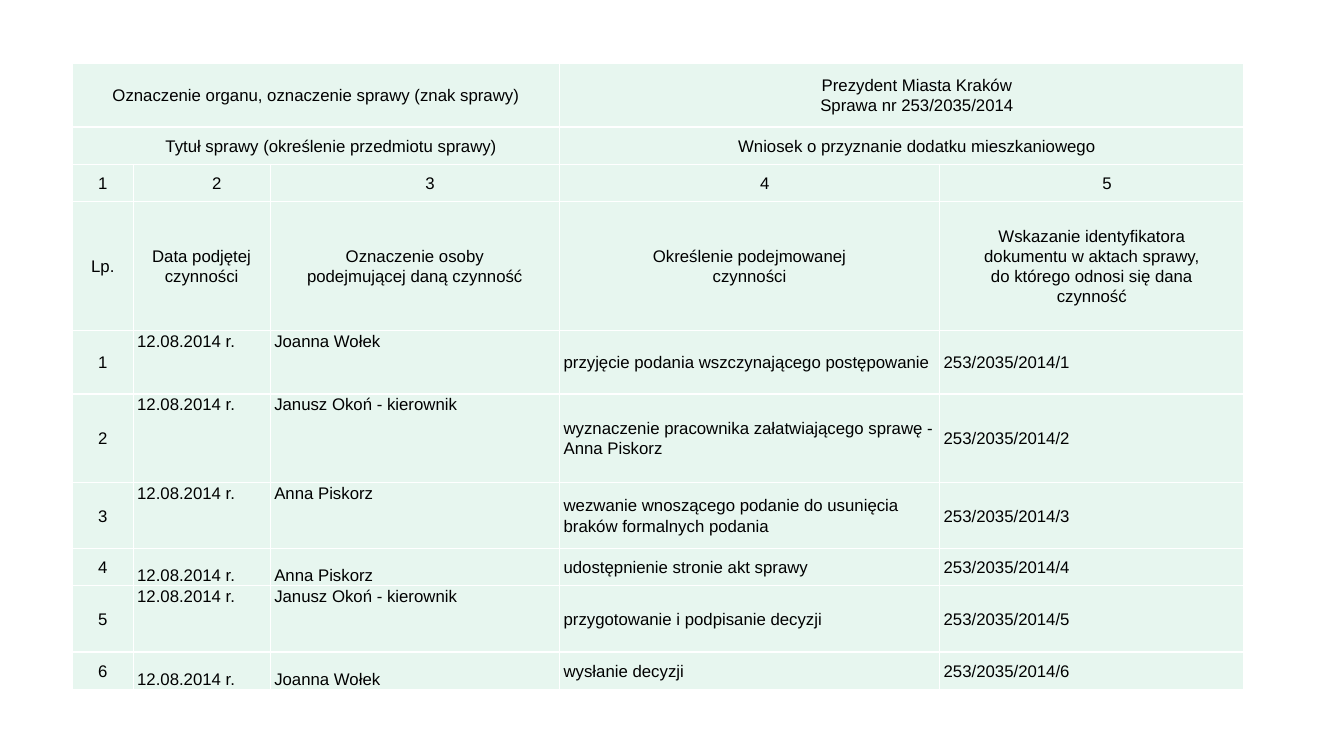
from copy import deepcopy
from dataclasses import dataclass

from lxml.etree import SubElement
from pptx import Presentation
from pptx.dml.color import RGBColor
from pptx.enum.text import MSO_ANCHOR as Anchor, PP_ALIGN as Align
from pptx.oxml.ns import qn
from pptx.util import Inches, Pt


@dataclass(frozen=True)
class Theme:
    font: str = "Arial"
    size: float = 12
    ink: str = "000000"
    fill: str = "E7F6EF"
    border: str = "FFFFFF"
    border_width: float = 1
    line_spacing: float = 1.07
    first_line: float = 0.3
    margin: float = 0.04


COLUMNS = [0.6, 1.36, 2.87, 3.77, 3.02]
ROWS = [0.63, 0.37, 0.37, 1.28, 0.63, 0.88, 0.65, 0.37, 0.66, 0.37]
CASE = "253/2035/2014"
DATE = "12.08.2014 r."
TITLES = [
    (["Oznaczenie organu, oznaczenie sprawy (znak sprawy)"],
     ["Prezydent Miasta Kraków", f"Sprawa nr {CASE}"]),
    (["Tytuł sprawy (określenie przedmiotu sprawy)"],
     ["Wniosek o przyznanie dodatku mieszkaniowego"]),
]
HEADINGS = [
    "Lp.",
    "Data podjętej\nczynności",
    "Oznaczenie osoby\npodejmującej daną czynność",
    "Określenie podejmowanej\nczynności",
    "Wskazanie identyfikatora\ndokumentu w aktach sprawy,\n"
    "do którego odnosi się dana\nczynność",
]
ACTIONS = [
    ("Joanna Wołek", "przyjęcie podania wszczynającego postępowanie", Anchor.TOP),
    ("Janusz Okoń - kierownik",
     "wyznaczenie pracownika załatwiającego sprawę - Anna Piskorz", Anchor.TOP),
    ("Anna Piskorz",
     "wezwanie wnoszącego podanie do usunięcia braków formalnych podania", Anchor.TOP),
    ("Anna Piskorz", "udostępnienie stronie akt sprawy", Anchor.BOTTOM),
    ("Janusz Okoń - kierownik", "przygotowanie i podpisanie decyzji", Anchor.TOP),
    ("Joanna Wołek", "wysłanie decyzji", Anchor.BOTTOM),
]


class Deck:
    def __init__(self, prs, theme):
        self.theme = theme
        self.s = prs.slides.add_slide(prs.slide_layouts[6])

    def table(self, left, top, columns, rows):
        frame = self.s.shapes.add_table(
            len(rows), len(columns), Inches(left), Inches(top),
            Inches(sum(columns)), Inches(sum(rows)))
        table = frame.table
        table.first_row = table.horz_banding = False
        for column, width in zip(table.columns, columns):
            column.width = Inches(width)
        for row, height in zip(table.rows, rows):
            row.height = Inches(height)
        for cell in table.iter_cells():
            self.style(cell)
        return table

    def style(self, cell):
        cell.margin_left = cell.margin_right = 0
        cell.margin_top = cell.margin_bottom = 0
        props = cell._tc.get_or_add_tcPr()
        for side in ("lnL", "lnR", "lnT", "lnB"):
            line = SubElement(props, qn(f"a:{side}"),
                              w=str(Pt(self.theme.border_width)))
            solid = SubElement(line, qn("a:solidFill"))
            SubElement(solid, qn("a:srgbClr"), val=self.theme.border)
        cell.fill.solid()
        cell.fill.fore_color.rgb = RGBColor.from_string(self.theme.fill)

    def text(self, cell, paragraphs, align=Align.CENTER, anchor=Anchor.MIDDLE,
             margin=0, indent=0):
        cell.vertical_anchor = anchor
        tf = cell.text_frame
        for i, content in enumerate(paragraphs):
            p = tf.paragraphs[0] if i == 0 else tf.add_paragraph()
            p.alignment = align
            p.line_spacing = self.theme.line_spacing
            props = p._p.get_or_add_pPr()
            props.set("marL", str(Inches(margin)))
            props.set("indent", str(Inches(indent)))
            for j, part in enumerate(content.split("\n")):
                if j:
                    p.add_line_break()
                    p._p[-1].append(deepcopy(r.font._rPr))
                r = p.add_run()
                r.text = part
                r.font.name = self.theme.font
                r.font.size = Pt(self.theme.size)
                r.font.color.rgb = RGBColor.from_string(self.theme.ink)


def main():
    prs = Presentation()
    prs.slide_width, prs.slide_height = Inches(13.33), Inches(7.5)
    theme = Theme()
    deck = Deck(prs, theme)
    table = deck.table(0.72, 0.63, COLUMNS, ROWS)

    for row, (label, value) in enumerate(TITLES):
        table.cell(row, 0).merge(table.cell(row, 2))
        table.cell(row, 3).merge(table.cell(row, 4))
        deck.text(table.cell(row, 0), label, indent=theme.first_line if row else 0)
        deck.text(table.cell(row, 3), value, indent=theme.first_line)

    for col, heading in enumerate(HEADINGS):
        deck.text(table.cell(2, col), [str(col + 1)],
                  indent=theme.first_line if col else 0)
        deck.text(table.cell(3, col), [heading])

    for number, (person, action, anchor) in enumerate(ACTIONS, 1):
        row = number + 3
        deck.text(table.cell(row, 0), [str(number)])
        entries = [
            (DATE, Align.JUSTIFY, anchor),
            (person, Align.JUSTIFY, anchor),
            (action, Align.LEFT, Anchor.MIDDLE),
            (f"{CASE}/{number}", Align.JUSTIFY, Anchor.MIDDLE),
        ]
        for col, (entry, align, place) in enumerate(entries, 1):
            deck.text(table.cell(row, col), [entry], align, place, theme.margin)

    prs.save("out.pptx")


if __name__ == "__main__":
    main()
